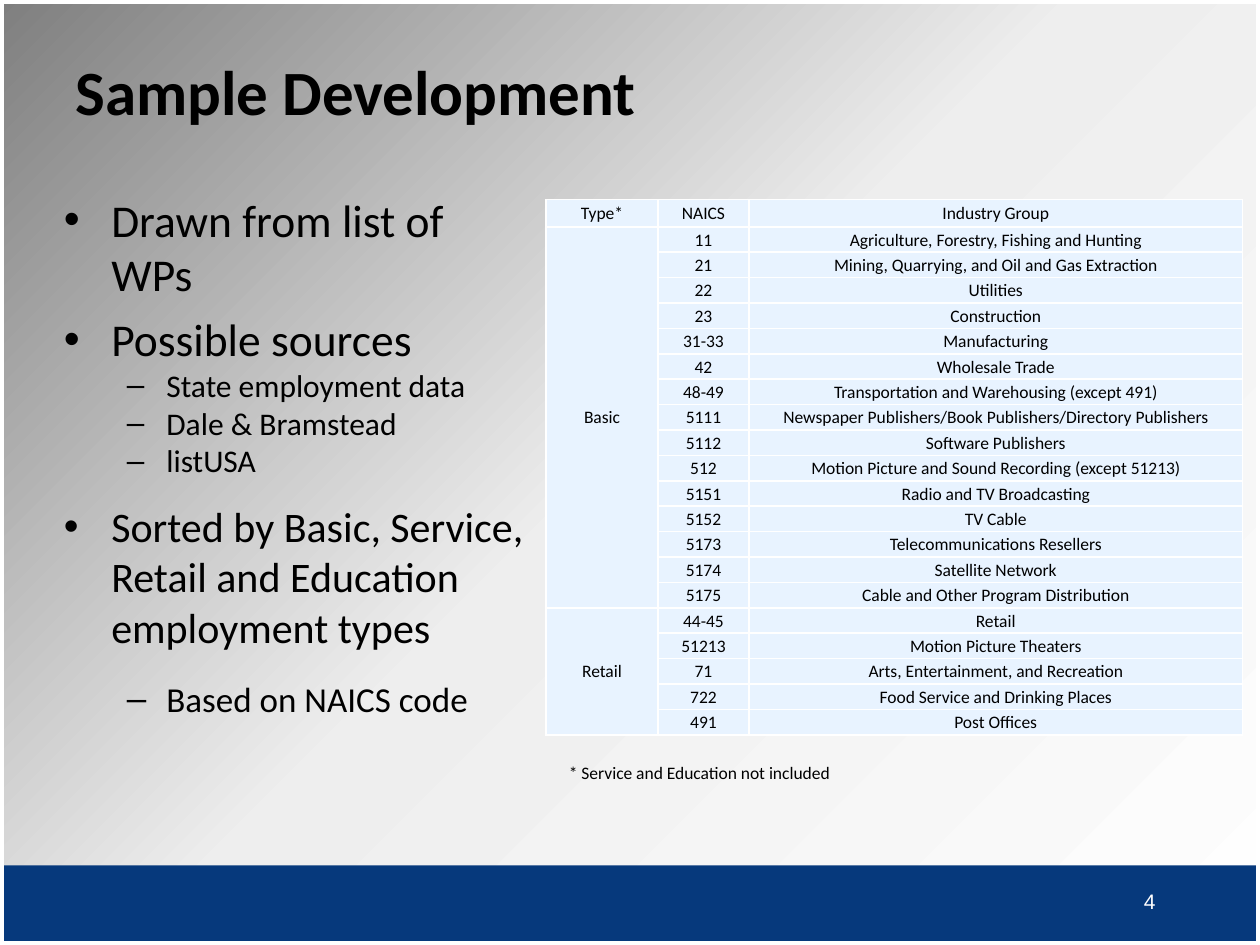
from dataclasses import dataclass
from typing import NamedTuple

from pptx import Presentation
from pptx.dml.color import RGBColor
from pptx.enum.shapes import MSO_SHAPE
from pptx.enum.text import MSO_ANCHOR, PP_ALIGN
from pptx.oxml import parse_xml
from pptx.oxml.ns import nsdecls, qn
from pptx.util import Pt


@dataclass(frozen=True)
class Theme:
    """Colours, fonts and type sizes of the slide."""
    font: str = "Calibri"
    number_font: str = "Arial"
    black: str = "000000"
    white: str = "FFFFFF"
    navy: str = "06397C"
    cell: str = "E8F3FF"
    glow: str = "FEFEFE"
    mist: str = "EEEEEE"
    shade: str = "7F7F7F"
    title: float = 36
    small: float = 10
    number: float = 12


class Box(NamedTuple):
    """Left, top, width and height in points."""
    x: float
    y: float
    w: float
    h: float


class Bullet(NamedTuple):
    """One bulleted paragraph with its level, size and spacing."""
    text: str
    size: float
    level: int = 0
    before: float = 0
    after: float = 0


class BulletStyle(NamedTuple):
    """Bullet mark and indents of one level."""
    char: str
    margin: float
    hang: float


class Group(NamedTuple):
    """Employment type with its NAICS codes and industries."""
    name: str
    industries: list[tuple[str, str]]


THEME = Theme()
SLIDE = Box(0, 0, 720, 540)
STYLES = [BulletStyle("•", 27, 27), BulletStyle("–", 58.5, 22.5)]
BULLETS = [
    Bullet("Drawn from list of\nWPs", 26, after=6),
    Bullet("Possible sources", 26),
    Bullet("State employment data", 18, 1),
    Bullet("Dale & Bramstead", 18, 1),
    Bullet("listUSA", 18, 1, after=6),
    Bullet("Sorted by Basic, Service,\nRetail and Education employment types", 24, 0, 6, 9),
    Bullet("Based on NAICS code", 20, 1, 6, 9),
]
HEADER = ("Type*", "NAICS", "Industry Group")
COLUMNS = (64, 52, 282)
HEADER_HEIGHT, ROW_HEIGHT = 15.6, 14.52
GROUPS = [
    Group("Basic", [
        ("11", "Agriculture, Forestry, Fishing and Hunting"),
        ("21", "Mining, Quarrying, and Oil and Gas Extraction"),
        ("22", "Utilities"),
        ("23", "Construction"),
        ("31-33", "Manufacturing"),
        ("42", "Wholesale Trade"),
        ("48-49", "Transportation and Warehousing (except 491)"),
        ("5111", "Newspaper Publishers/Book Publishers/Directory Publishers"),
        ("5112", "Software Publishers"),
        ("512", "Motion Picture and Sound Recording (except 51213)"),
        ("5151", "Radio and TV Broadcasting"),
        ("5152", "TV Cable"),
        ("5173", "Telecommunications Resellers"),
        ("5174", "Satellite Network"),
        ("5175", "Cable and Other Program Distribution"),
    ]),
    Group("Retail", [
        ("44-45", "Retail"),
        ("51213", "Motion Picture Theaters"),
        ("71", "Arts, Entertainment, and Recreation"),
        ("722", "Food Service and Drinking Places"),
        ("491", "Post Offices"),
    ]),
]


def set_background(s) -> None:
    """Fill the background with a gradient centred on the lower right corner."""
    s.background.fill.gradient()
    old = s.element.find(".//" + qn("a:gradFill"))
    old.getparent().replace(old, parse_xml(
        f'<a:gradFill {nsdecls("a")} rotWithShape="1"><a:gsLst>'
        f'<a:gs pos="0"><a:srgbClr val="{THEME.glow}"><a:alpha val="50000"/></a:srgbClr></a:gs>'
        f'<a:gs pos="51000"><a:srgbClr val="{THEME.mist}"/></a:gs>'
        f'<a:gs pos="100000"><a:srgbClr val="{THEME.shade}"/></a:gs></a:gsLst>'
        '<a:path path="circle"><a:fillToRect l="100000" t="100000"/></a:path></a:gradFill>'))


def add_rect(s, box: Box, fill: str = "", line: float = 0) -> None:
    """Draw a filled rectangle or a white frame."""
    sp = s.shapes.add_shape(MSO_SHAPE.RECTANGLE, *map(Pt, box))
    sp.shadow.inherit = False
    if fill:
        sp.fill.solid()
        sp.fill.fore_color.rgb = RGBColor.from_string(fill)
    else:
        sp.fill.background()
    if line:
        sp.line.color.rgb = RGBColor.from_string(THEME.white)
        sp.line.width = Pt(line)
    else:
        sp.line.fill.background()


def write(p, text: str, size: float, color: str = THEME.black, **formats) -> None:
    """Write the lines of a paragraph as formatted runs."""
    values = {"name": THEME.font, "size": Pt(size), **formats}
    for i, line in enumerate(text.split("\n")):
        if i:
            p.add_line_break()
        r = p.add_run()
        r.text = line
        for name, value in values.items():
            setattr(r.font, name, value)
        r.font.color.rgb = RGBColor.from_string(color)


def add_text_frame(s, box: Box, anchor: MSO_ANCHOR = MSO_ANCHOR.TOP):
    """Add a wrapping text box and return its frame."""
    tf = s.shapes.add_textbox(*map(Pt, box)).text_frame
    tf.word_wrap = True
    tf.vertical_anchor = anchor
    return tf


def add_bullets(s, box: Box, bullets: list[Bullet]) -> None:
    """Write the bulleted list."""
    tf = add_text_frame(s, box)
    for i, b in enumerate(bullets):
        p = tf.add_paragraph() if i else tf.paragraphs[0]
        style = STYLES[b.level]
        pPr = p._p.get_or_add_pPr()
        pPr.set("marL", str(Pt(style.margin)))
        pPr.set("indent", str(-Pt(style.hang)))
        pPr.append(parse_xml(f'<a:buFont {nsdecls("a")} typeface="Arial"/>'))
        pPr.append(parse_xml(f'<a:buChar {nsdecls("a")} char="{style.char}"/>'))
        formats = {"level": b.level, "space_before": Pt(b.before), "space_after": Pt(b.after)}
        for name, value in formats.items():
            setattr(p, name, value)
        write(p, b.text, b.size)


def format_cell(cell) -> None:
    """Give a cell its borders, fill, margins and anchor."""
    tcPr = cell._tc.get_or_add_tcPr()
    for side in "LRTB":
        tcPr.append(parse_xml(
            f'<a:ln{side} {nsdecls("a")} w="{Pt(1)}"><a:solidFill>'
            f'<a:srgbClr val="{THEME.white}"/></a:solidFill></a:ln{side}>'))
    cell.fill.solid()
    cell.fill.fore_color.rgb = RGBColor.from_string(THEME.cell)
    formats = {"margin_left": Pt(0.72), "margin_right": Pt(0.72), "margin_top": Pt(0.72),
               "margin_bottom": 0, "vertical_anchor": MSO_ANCHOR.MIDDLE}
    for name, value in formats.items():
        setattr(cell, name, value)


def add_industry_table(s, box: Box, groups: list[Group]) -> None:
    """Draw the industries with one merged type cell per group."""
    rows = [HEADER]
    spans = []
    for g in groups:
        spans.append((len(rows), len(rows) + len(g.industries) - 1))
        rows += [("" if i else g.name, *item) for i, item in enumerate(g.industries)]
    table = s.shapes.add_table(len(rows), len(COLUMNS), *map(Pt, box)).table
    for column, width in zip(table.columns, COLUMNS):
        column.width = Pt(width)
    for i, row in enumerate(rows):
        table.rows[i].height = Pt(ROW_HEIGHT if i else HEADER_HEIGHT)
        for j, text in enumerate(row):
            cell = table.cell(i, j)
            format_cell(cell)
            p = cell.text_frame.paragraphs[0]
            p.alignment = PP_ALIGN.CENTER
            write(p, text, THEME.small)
    for first, last in spans:
        table.cell(first, 0).merge(table.cell(last, 0))


def main() -> None:
    """Build and save the slide."""
    prs = Presentation()
    prs.slide_width, prs.slide_height = Pt(SLIDE.w), Pt(SLIDE.h)
    s = prs.slides.add_slide(prs.slide_layouts[6])
    set_background(s)
    add_rect(s, SLIDE, line=2)
    add_rect(s, Box(2, 494.5, 718, 43.5), fill=THEME.navy)
    add_rect(s, SLIDE, line=4.5)
    p = add_text_frame(s, Box(594, 504, 126, 21.6)).paragraphs[0]
    p.alignment = PP_ALIGN.CENTER
    write(p, "4", THEME.number, THEME.white, name=THEME.number_font)
    tf = add_text_frame(s, Box(36, 20, 648, 63), MSO_ANCHOR.MIDDLE)
    write(tf.paragraphs[0], "Sample Development", THEME.title, bold=True)
    add_bullets(s, Box(29.5, 106, 341, 240), BULLETS)
    add_industry_table(s, Box(312, 114, 398, 306), GROUPS)
    tf = add_text_frame(s, Box(318, 432, 384, 19.4))
    write(tf.paragraphs[0], "* Service and Education not included", THEME.small)
    prs.save("out.pptx")


if __name__ == "__main__":
    main()
